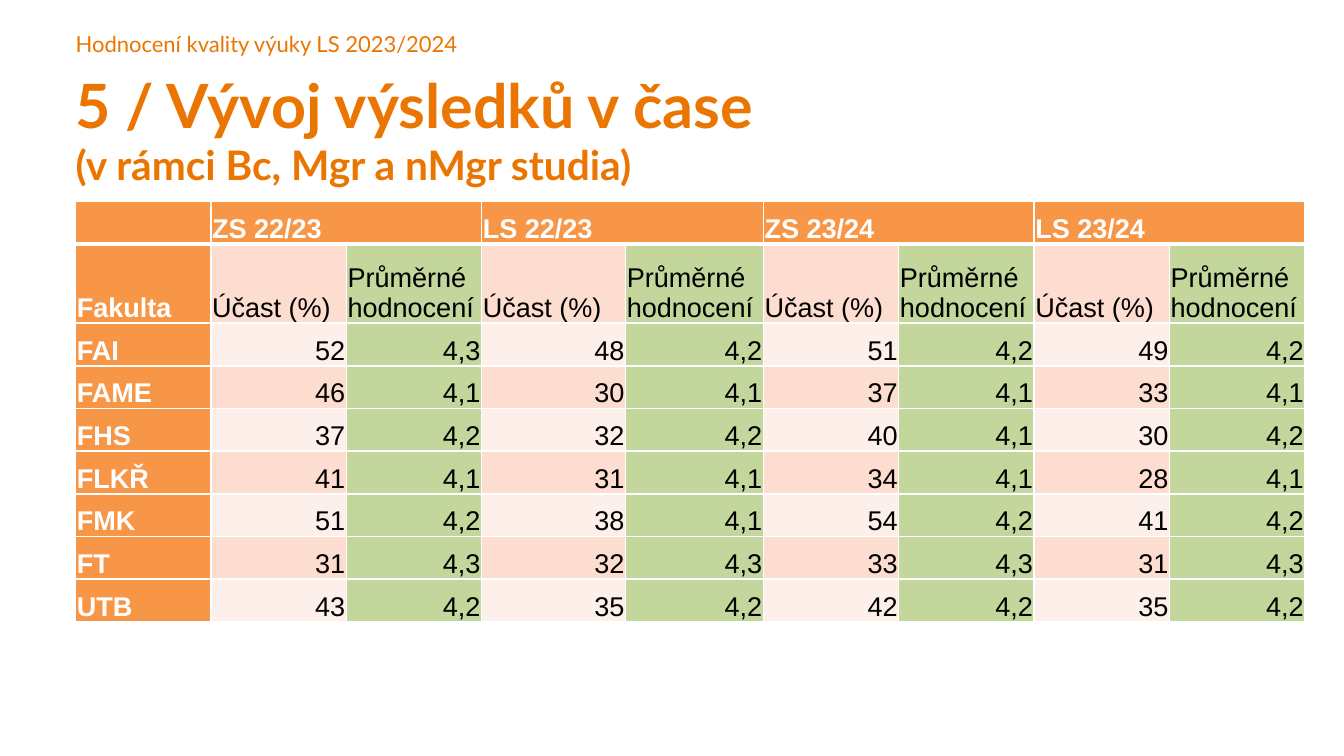
from dataclasses import dataclass

from lxml import etree
from pptx import Presentation
from pptx import util as u
from pptx.dml.color import RGBColor
from pptx.enum import text
from pptx.oxml import ns


@dataclass(frozen=True)
class Theme:
    """Colours, fonts and type sizes of the slide."""
    accent: str = "EA7500"
    header: str = "F79646"
    bands: tuple = ("FDEFE9", "FCDDCF")
    rating: str = "C3D69B"
    white: str = "FFFFFF"
    black: str = "000000"
    heading_font: str = "Lato"
    table_font: str = "Arial"
    title: int = 36
    subtitle: int = 24
    kicker: int = 13
    cell: int = 16


class Deck:
    """Hold the theme and the current slide, and add elements to it."""

    def __init__(self, prs, theme):
        """Start a blank slide."""
        self.theme = theme
        self.s = prs.slides.add_slide(prs.slide_layouts[6])

    def add_words(self, p, words, color, **font):
        """Add one formatted run to a paragraph."""
        r = p.add_run()
        r.text = words
        r.font.color.rgb = RGBColor.from_string(color)
        for key, value in font.items():
            setattr(r.font, key, value)

    def add_text(self, box, lines, bold=False):
        """Add a text box with one paragraph per (words, size) pair."""
        tf = self.s.shapes.add_textbox(*map(u.Inches, box)).text_frame
        form = dict(word_wrap=True, margin_left=0, margin_top=0, margin_right=0, margin_bottom=0)
        for key, value in form.items():
            setattr(tf, key, value)
        for i, (words, size) in enumerate(lines):
            p = tf.add_paragraph() if i else tf.paragraphs[0]
            self.add_words(p, words, self.theme.accent, name=self.theme.heading_font,
                           size=u.Pt(size), bold=bold)

    def add_borders(self, cell, bottom):
        """Draw white lines around a cell."""
        tcPr = cell._tc.get_or_add_tcPr()
        for tag, width in (("lnL", 1), ("lnR", 1), ("lnT", 1), ("lnB", bottom)):
            ln = etree.SubElement(tcPr, ns.qn(f"a:{tag}"), w=str(u.Pt(width)))
            fill = etree.SubElement(ln, ns.qn("a:solidFill"))
            etree.SubElement(fill, ns.qn("a:srgbClr"), val=self.theme.white)

    def fill_cell(self, cell, words, row, col):
        """Format and fill one cell according to its place in the grid."""
        t = self.theme
        head = row == 0 or col == 0
        self.add_borders(cell, 1 if row else 3)
        fill = t.header if head else t.bands[row % 2] if col % 2 else t.rating
        cell.fill.solid()
        cell.fill.fore_color.rgb = RGBColor.from_string(fill)
        form = dict(vertical_anchor=text.MSO_ANCHOR.BOTTOM, margin_left=u.Inches(0.01),
                    margin_top=u.Inches(0.01), margin_right=u.Inches(0.01), margin_bottom=0)
        for key, value in form.items():
            setattr(cell, key, value)
        if words:
            p = cell.text_frame.paragraphs[0]
            p.alignment = text.PP_ALIGN.RIGHT if row > 1 and col else text.PP_ALIGN.LEFT
            self.add_words(p, words, t.white if head else t.black, name=t.table_font,
                           size=u.Pt(t.cell), bold=head)

    def add_table(self, box, rows, widths, heights):
        """Add the results table, merging each term over its two columns."""
        tbl = self.s.shapes.add_table(len(rows), len(widths), *map(u.Inches, box)).table
        for column, width in zip(tbl.columns, widths):
            column.width = u.Inches(width)
        for line, height in zip(tbl.rows, heights):
            line.height = u.Inches(height)
        for row, values in enumerate(rows):
            for col, words in enumerate(values):
                self.fill_cell(tbl.cell(row, col), words, row, col)
        for col in range(1, len(widths), 2):
            tbl.cell(0, col).merge(tbl.cell(0, col + 1))


TERMS = ["ZS 22/23", "LS 22/23", "ZS 23/24", "LS 23/24"]
RESULTS = """FAI 52 4,3 48 4,2 51 4,2 49 4,2
FAME 46 4,1 30 4,1 37 4,1 33 4,1
FHS 37 4,2 32 4,2 40 4,1 30 4,2
FLKŘ 41 4,1 31 4,1 34 4,1 28 4,1
FMK 51 4,2 38 4,1 54 4,2 41 4,2
FT 31 4,3 32 4,3 33 4,3 31 4,3
UTB 43 4,2 35 4,2 42 4,2 35 4,2"""


def main():
    """Build and save the slide."""
    prs = Presentation()
    prs.slide_width, prs.slide_height = u.Inches(11.02), u.Inches(6.2)
    theme = Theme()
    deck = Deck(prs, theme)
    deck.add_text((0.62, 0.55, 9.92, 1.01),
                  [("5 / Vývoj výsledků v čase", theme.title),
                   ("(v rámci Bc, Mgr a nMgr studia)", theme.subtitle)], bold=True)
    deck.add_text((0.62, 0.25, 9.92, 0.22),
                  [("Hodnocení kvality výuky LS 2023/2024", theme.kicker)])
    rows = [[""] + [words for term in TERMS for words in (term, "")],
            ["Fakulta"] + ["Účast (%)", "Průměrné hodnocení"] * len(TERMS)]
    rows += [line.split() for line in RESULTS.splitlines()]
    widths = [1.11] * 3 + [1.18, 1.13] + [1.11] * 4
    heights = [0.35, 0.65] + [0.35] * 7
    deck.add_table((0.62, 1.65, 10.07, 3.44), rows, widths, heights)
    prs.save("out.pptx")


if __name__ == "__main__":
    main()
